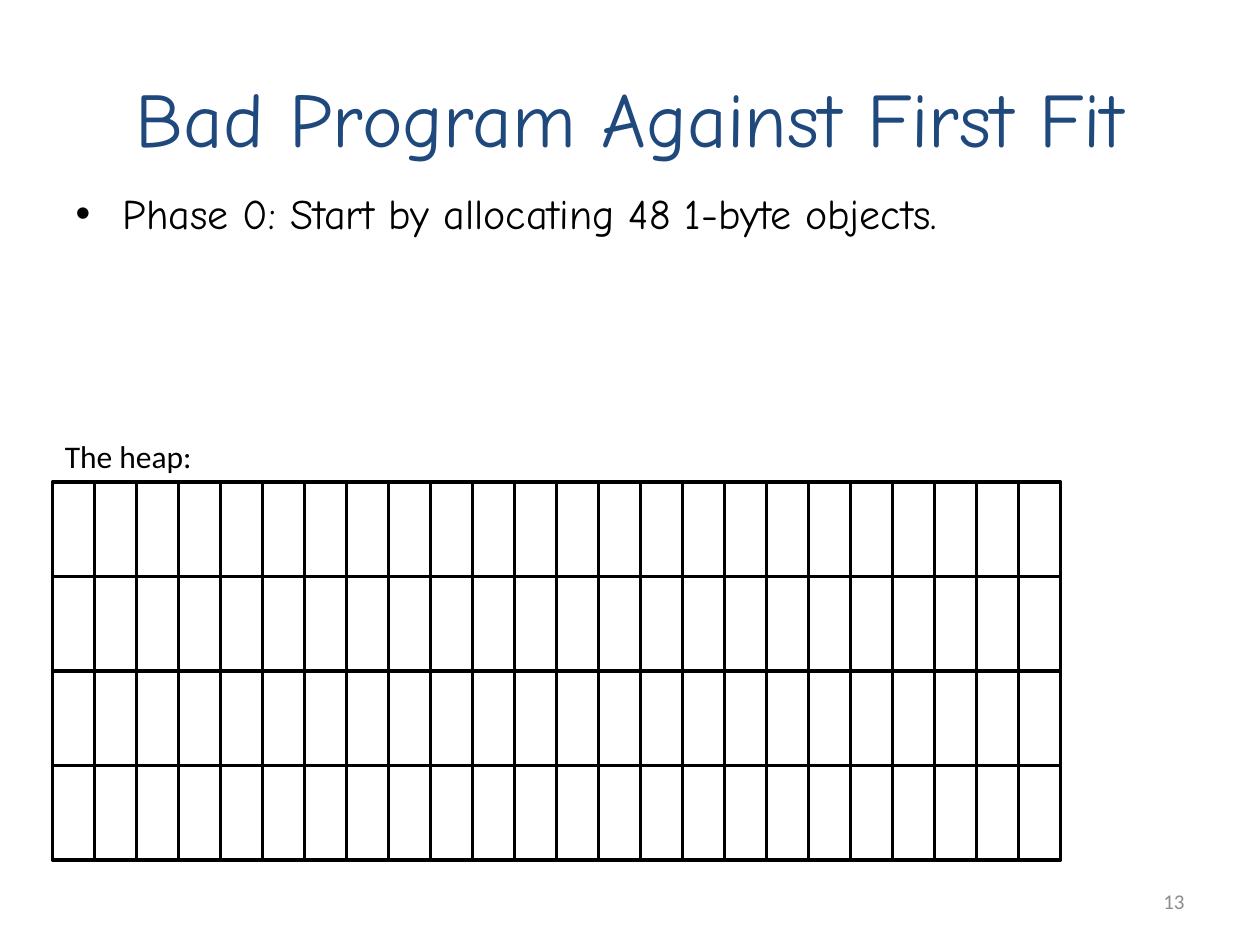
from dataclasses import dataclass
from itertools import product

from pptx import Presentation
from pptx.dml.color import RGBColor
from pptx.enum.shapes import MSO_SHAPE
from pptx.enum.text import MSO_ANCHOR, PP_ALIGN
from pptx.util import Emu, Pt

PX = 7620  # EMU per px, 120 px to the inch


@dataclass(frozen=True)
class Theme:
    heading_font: str = "Comic Neue"
    plain_font: str = "Calibri"
    title_color: str = "1F497D"
    ink: str = "000000"
    muted: str = "8C8C8C"
    cell_fill: str = "FFFFFF"
    title_size: int = 44
    body_size: int = 24
    label_size: int = 18
    number_size: int = 12
    cell_line: int = 2


def px(n):
    return Emu(n * PX)


class SlideBuilder:
    def __init__(self, slide, theme):
        self.slide = slide
        self.theme = theme

    def add_run(self, sp, text, font, size, color, **paragraph_format):
        p = sp.text_frame.paragraphs[0]
        for name, value in paragraph_format.items():
            setattr(p, name, value)
        r = p.add_run()
        r.text = text
        for name, value in {"name": font, "size": Pt(size)}.items():
            setattr(r.font, name, value)
        r.font.color.rgb = RGBColor.from_string(color)

    def place(self, sp, *box):
        for name, value in zip(("left", "top", "width", "height"), box):
            setattr(sp, name, px(value))

    def title(self, text, *box):
        sp, t = self.slide.shapes.title, self.theme
        self.place(sp, *box)
        self.add_run(sp, text, t.heading_font, t.title_size, t.title_color,
                     alignment=PP_ALIGN.CENTER)

    def bullet(self, text, *box):
        sp, t = self.slide.placeholders[1], self.theme
        self.place(sp, *box)
        self.add_run(sp, text, t.heading_font, t.body_size, t.ink)

    def text(self, text, *box, size, color, anchor=MSO_ANCHOR.TOP, align=PP_ALIGN.LEFT):
        sp = self.slide.shapes.add_textbox(*map(px, box))
        for name, value in {"word_wrap": True, "vertical_anchor": anchor}.items():
            setattr(sp.text_frame, name, value)
        self.add_run(sp, text, self.theme.plain_font, size, color, alignment=align)

    def cell(self, *box):
        sp = self.slide.shapes.add_shape(MSO_SHAPE.RECTANGLE, *map(px, box))
        sp.shadow.inherit = False
        sp.fill.solid()
        sp.fill.fore_color.rgb = RGBColor.from_string(self.theme.cell_fill)
        sp.line.color.rgb = RGBColor.from_string(self.theme.ink)
        sp.line.width = Pt(self.theme.cell_line)

    def grid(self, left, top, rows, cols, width, height):
        for row, col in product(range(rows), range(cols)):
            self.cell(left + col * width, top + row * height, width, height)


def main():
    prs = Presentation()
    prs.slide_width, prs.slide_height = px(1200), px(900)
    theme = Theme()
    s = SlideBuilder(prs.slides.add_slide(prs.slide_layouts[1]), theme)

    s.title("Bad Program Against First Fit", 60, 36, 1080, 150)
    s.bullet("Phase 0: Start by allocating 48 1-byte objects.", 60, 173, 1080, 239)
    s.text("13", 860, 834, 280, 48, size=theme.number_size, color=theme.muted,
           anchor=MSO_ANCHOR.MIDDLE, align=PP_ALIGN.RIGHT)
    s.grid(50, 459, rows=4, cols=24, width=40, height=90)
    s.text("The heap:", 50, 410, 310, 48, size=theme.label_size, color=theme.ink)

    prs.save("out.pptx")


if __name__ == "__main__":
    main()
